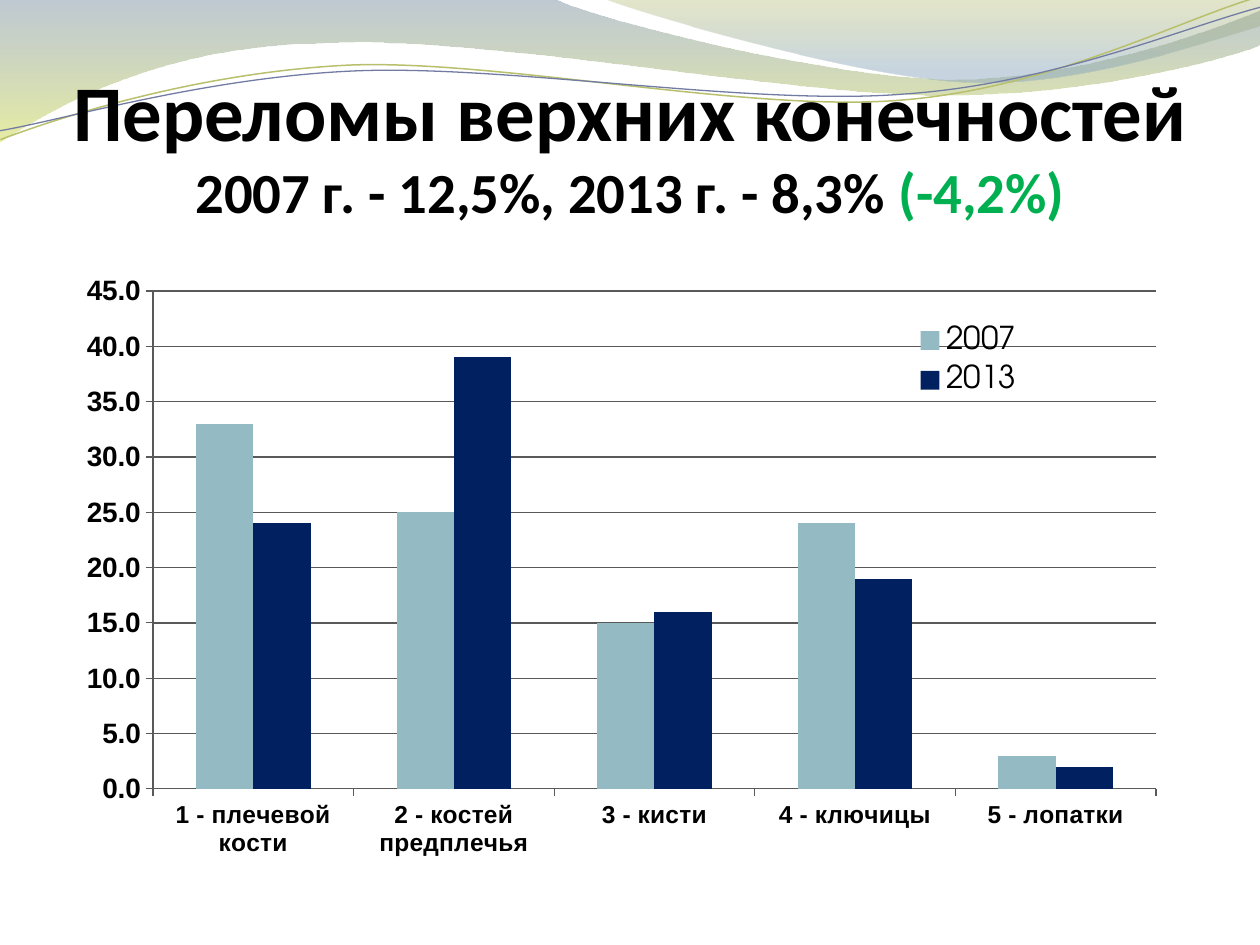
"""Builds a slide on upper limb fractures: waves, a title and a column chart."""
from lxml import etree
from pptx import Presentation, util as u
from pptx.chart.data import CategoryChartData
from pptx.dml.color import RGBColor
from pptx.enum import chart as charts, text
from pptx.oxml.ns import qn

PX = 914400 / 126
BLACK = RGBColor(0, 0, 0)
GREEN = RGBColor(0x00, 0xB0, 0x50)
GRID = RGBColor(0x59, 0x59, 0x59)
SLATE = RGBColor(0x72, 0x88, 0x9B)
LIME = RGBColor(0xD3, 0xDE, 0x57)
OLIVE = RGBColor(0xA4, 0xAC, 0x50)
SKY = RGBColor(0x84, 0xA3, 0xBD)
MOSS = RGBColor(0xB9, 0xC0, 0x6C)
VIOLET = RGBColor(0x72, 0x7C, 0xA3)
TEAL = RGBColor(0x94, 0xBA, 0xC3)
NAVY = RGBColor(0x00, 0x20, 0x60)

BANDS = [
    ([[(0, 0)], [(554, -1)], [(600, 21), (837, 79), (955, 79)],
      [(1074, 79), (1207, 33), (1260, 11)], [(1261, 45)],
      [(1239, 55), (1096, 96), (940, 95)], [(784, 95), (481, 35), (324, 43)],
      [(163, 45), (58, 105), (-1, 142)], [(0, 0)]], [(0, SLATE, 45), (1, LIME, 55)]),
    ([[(604, -1)], [(641, 14), (859, 78), (969, 82)],
      [(1079, 87), (1211, 40), (1260, 26)], [(1260, 0)], [(604, -1)]],
     [(0, OLIVE, 30), (0.8, SKY, 45)]),
]
STRAND_TURN = 357.3
STRANDS = [
    ([[(-2, 110)], [(59, 90), (200, 52), (350, 52)], [(498, 53), (745, 118), (897, 113)],
      [(1048, 109), (1184, 45), (1260, 27)]], MOSS, 0.85),
    ([[(-2, 101)], [(58, 94), (207, 57), (357, 58)], [(508, 59), (751, 112), (902, 107)],
      [(1052, 104), (1187, 53), (1263, 37)]], VIOLET, 0.75),
]
TITLE = [
    [("Переломы верхних конечностей", 45, BLACK)],
    [("2007 г. - 12,5%, 2013 г. - 8,3% ", 32.4, BLACK), ("(-4,2%)", 32.4, GREEN)],
]
BONES = ["1 - плечевой кости", "2 - костей предплечья", "3 - кисти", "4 - ключицы", "5 - лопатки"]
YEARS = [("2007", [33, 25, 15, 24, 3], TEAL), ("2013", [24, 39, 16, 19, 2], NAVY)]
CHART_BOX = (63, 267, 1134, 605)
PLOT_BOX = (90, 24, 1003, 498)
LEGEND_BOX = (843, 49, 125, 89)


def px(*lengths):
    return [round(length * PX) for length in lengths]


def add_outline(slide, steps, close):
    start, *rest = [tuple(px(*point)) for step in steps for point in step]
    builder = slide.shapes.build_freeform(*start)
    builder.add_line_segments(rest, close=close)
    outline = builder.convert_to_shape()
    outline.shadow.inherit = False
    sides = iter(list(outline.element.iter(qn("a:lnTo"))))
    for step in steps[1:]:
        group = [next(sides) for point in step]
        if len(group) == 3:
            curve = etree.Element(qn("a:cubicBezTo"))
            group[0].addprevious(curve)
            for side in group:
                curve.append(side[0])
                side.getparent().remove(side)
    return outline


def add_band(slide, steps, stops):
    band = add_outline(slide, steps, True)
    band.line.fill.background()
    band.fill.gradient()
    band.fill.gradient_angle = 270
    for stop, (position, color, opacity) in zip(band.fill.gradient_stops, stops):
        stop.position = position
        stop.color.rgb = color
    tints = list(band.element.spPr.iter(qn("a:srgbClr")))
    for tint, (position, color, opacity) in zip(tints, stops):
        etree.SubElement(tint, qn("a:alpha")).set("val", str(opacity * 1000))


def add_strand(slide, steps, color, width):
    strand = add_outline(slide, steps, False)
    strand.rotation = STRAND_TURN
    strand.fill.background()
    strand.line.color.rgb = color
    strand.line.width = u.Pt(width)


def style(font, size, name, bold=False, color=BLACK):
    font.size, font.name, font.bold = u.Pt(size), name, bold
    font.color.rgb = color


def add_text(slide, lines, left, top, width, height, font):
    frame = slide.shapes.add_textbox(*px(left, top, width, height)).text_frame
    frame.word_wrap = True
    frame.vertical_anchor = text.MSO_ANCHOR.BOTTOM
    frame.margin_left = frame.margin_right = frame.margin_bottom = 0
    paragraph = frame.paragraphs[0]
    paragraph.alignment = text.PP_ALIGN.CENTER
    for index, line in enumerate(lines):
        if index:
            paragraph.add_line_break()
        for words, size, color in line:
            run = paragraph.add_run()
            run.text = words
            style(run.font, size, font, True, color)


def place(part, index, box, **modes):
    for old in part.findall(qn("c:layout")):
        part.remove(old)
    layout = etree.Element(qn("c:layout"))
    manual = etree.SubElement(layout, qn("c:manualLayout"))
    shares = {key: length / CHART_BOX[2 + i % 2] for i, (key, length) in enumerate(zip("xywh", box))}
    for key, value in {**modes, "xMode": "edge", "yMode": "edge", **shares}.items():
        etree.SubElement(manual, qn("c:" + key)).set("val", str(value))
    part.insert(index, layout)


def add_columns(slide):
    data = CategoryChartData(number_format="0.0")
    data.categories = BONES
    for year, shares, color in YEARS:
        data.add_series(year, shares)
    chart = slide.shapes.add_chart(charts.XL_CHART_TYPE.COLUMN_CLUSTERED,
                                   *px(*CHART_BOX), data).chart
    style(chart.font, 10, "Vollkorn")
    chart.has_title = False
    plot = chart.plots[0]
    plot.vary_by_categories = False
    plot.gap_width, plot.overlap = 150, 0
    for column, (year, shares, color) in zip(plot.series, YEARS):
        column.format.fill.solid()
        column.format.fill.fore_color.rgb = color
    shares_axis, bones_axis = chart.value_axis, chart.category_axis
    for axis, size in ((bones_axis, 14), (shares_axis, 16)):
        style(axis.tick_labels.font, size, "Arial", True)
        axis.major_tick_mark = charts.XL_TICK_MARK.OUTSIDE
        axis.format.line.color.rgb = GRID
    shares_axis.minimum_scale, shares_axis.maximum_scale, shares_axis.major_unit = 0, 45, 5
    shares_axis.tick_labels.number_format = "0.0"
    shares_axis.tick_labels.number_format_is_linked = False
    shares_axis.has_major_gridlines = True
    shares_axis.major_gridlines.format.line.color.rgb = GRID
    chart.has_legend = True
    legend = chart.legend
    legend.position = charts.XL_LEGEND_POSITION.RIGHT
    legend.include_in_layout = False
    style(legend.font, 18, "TeX Gyre Adventor")
    root = chart.element
    place(root.find(".//" + qn("c:legend")), 1, LEGEND_BOX)
    place(root.find(".//" + qn("c:plotArea")), 0, PLOT_BOX, layoutTarget="inner")


def main():
    deck = Presentation()
    deck.slide_width, deck.slide_height = px(1260, 945)
    slide = deck.slides.add_slide(deck.slide_layouts[6])
    for steps, stops in BANDS:
        add_band(slide, steps, stops)
    for steps, color, width in STRANDS:
        add_strand(slide, steps, color, width)
    add_text(slide, TITLE, 63, 97, 1134, 128, font="Calibri")
    add_columns(slide)
    deck.save("out.pptx")


if __name__ == "__main__":
    main()
